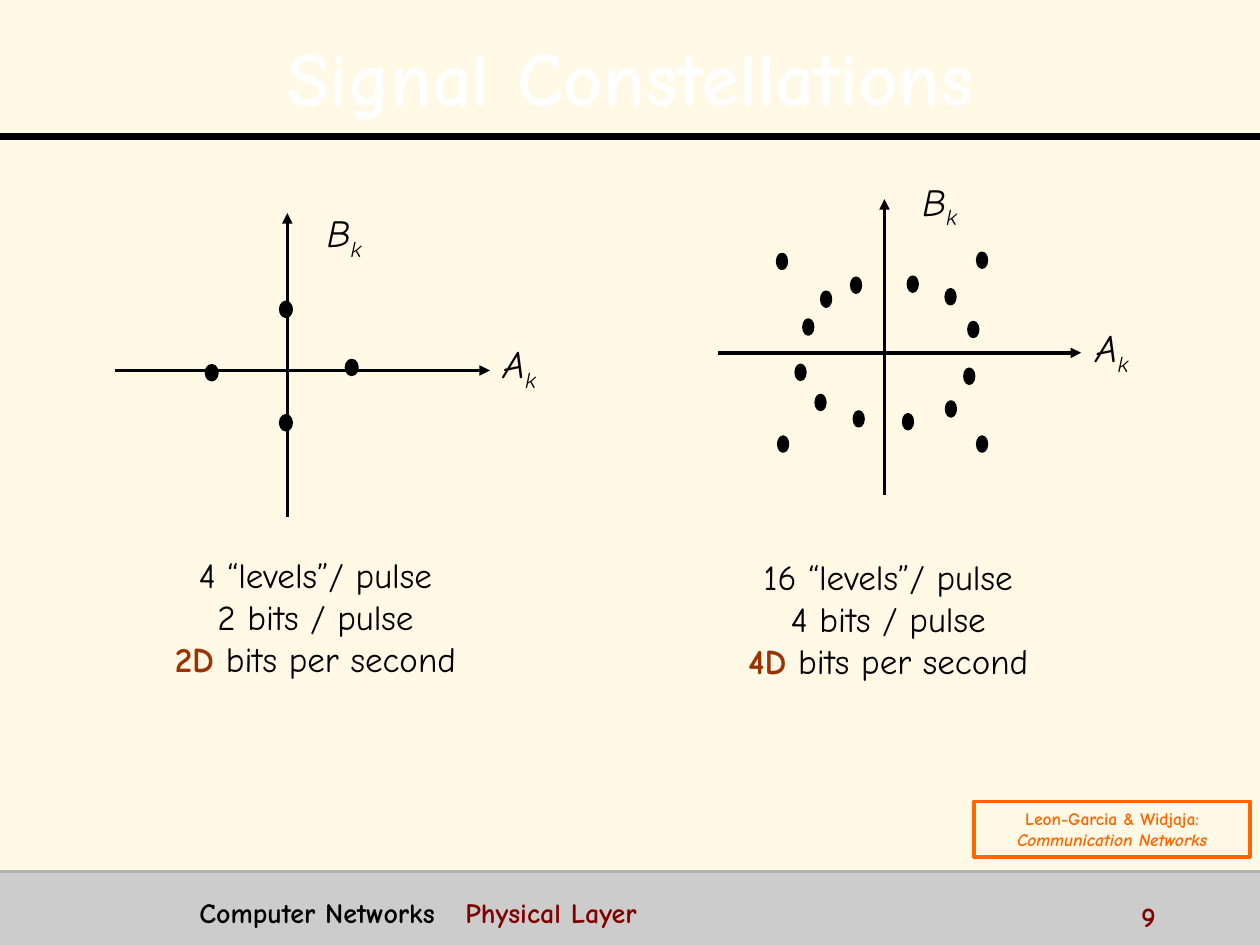
from lxml.etree import SubElement
from pptx import Presentation
from pptx.dml.color import RGBColor
from pptx.enum.shapes import MSO_CONNECTOR as Conn, MSO_SHAPE as Shape
from pptx.enum.text import MSO_ANCHOR as Anchor, MSO_AUTO_SIZE as Auto, PP_ALIGN as Align
from pptx.oxml.ns import qn
from pptx.util import Pt

FONT = "Comic Neue"
BLACK, RED, RUST, FLAME = "000000", "800000", "993300", "FF6600"


def paint(color, hue):
    """Set a solid fill or a font colour from a hex string."""
    if hasattr(color, "solid"):
        color.solid()
        color = color.fore_color
    color.rgb = RGBColor.from_string(hue)


def line(shapes, start, end, hue=BLACK, width=2, arrow=False):
    """Draw a straight line, with an arrowhead at its end if asked."""
    item = shapes.add_connector(Conn.STRAIGHT, *map(Pt, start + end))
    paint(item.line.fill, hue)
    item.line.width = Pt(width)
    if arrow:
        SubElement(item.line._get_or_add_ln(), qn("a:tailEnd"), type="triangle")
    SubElement(item._element.spPr, qn("a:effectLst"))


def shape(shapes, kind, area, fill=None, edge=None):
    """Add a flat preset shape with an optional fill and edge."""
    item = shapes.add_shape(kind, *map(Pt, area))
    item.shadow.inherit = False
    if fill:
        paint(item.fill, fill)
    else:
        item.fill.background()
    if edge:
        paint(item.line.fill, edge)
        item.line.width = Pt(2)
    else:
        item.line.fill.background()
    return item


def write(para, parts, size, align=Align.LEFT):
    """Fill a paragraph with runs given as (text, colour, styles)."""
    para.alignment = align
    for text, hue, style in parts:
        run = para.add_run()
        run.text = text
        font = run.font
        font.name, font.size = FONT, Pt(size)
        font.bold, font.italic = "b" in style, "i" in style
        paint(font.color, hue)
        if "s" in style:
            font._element.set("baseline", "-25000")


def fill_text(frame, rows, size, align=Align.LEFT):
    """Write one paragraph for each row of runs."""
    for i, parts in enumerate(rows):
        para = frame.add_paragraph() if i else frame.paragraphs[0]
        write(para, parts, size, align)


def text(shapes, area, rows, size, align=Align.LEFT, wrap=True, pad=(7.2, 3.6)):
    """Add a text box with equal opposite insets."""
    frame = shapes.add_textbox(*map(Pt, area)).text_frame
    frame.word_wrap = wrap
    frame.auto_size = Auto.NONE if wrap else Auto.SHAPE_TO_FIT_TEXT
    frame.margin_left = frame.margin_right = Pt(pad[0])
    frame.margin_top = frame.margin_bottom = Pt(pad[1])
    fill_text(frame, rows, size, align)
    return frame


def title(shapes, words):
    """Add the centred heading with its text shadow."""
    frame = text(shapes, (14.4, 9.4, 692, 62.6), [[(words, "FFFFFF", "b")]], 44, Align.CENTER)
    frame.vertical_anchor = Anchor.MIDDLE
    para = frame.paragraphs[0]
    para.line_spacing = 1.1
    props = para.runs[0].font._element
    glow = props.makeelement(qn("a:effectLst"), {})
    props.find(qn("a:solidFill")).addnext(glow)
    drop = SubElement(glow, qn("a:outerShdw"), dist="35921", dir="2700000")
    SubElement(drop, qn("a:srgbClr"), val=BLACK)


def plot(slide, upright, level, labels, width, dots):
    """Draw two axes with labels and signal points as one group."""
    shapes = slide.shapes.add_group_shape().shapes
    for start, end in (upright, level):
        line(shapes, start, end, arrow=True)
    for spot in dots:
        shape(shapes, Shape.OVAL, spot + (width, 8), BLACK, BLACK)
    for name, spot in zip("AB", labels):
        row = [(name, BLACK, "i"), ("k", BLACK, "is")]
        text(shapes, spot + (42, 37.4), [row], 22, Align.CENTER, False, (10.8, 5.8))
    return shapes


def caption(shapes, area, levels, bits):
    """State the levels, bits and bit rate of a constellation."""
    rows = [
        [(f"{levels} “levels”/ pulse", BLACK, "")],
        [(f"{bits} bits / pulse", BLACK, "")],
        [(f"{bits}D", RUST, "b"), (" bits per second", BLACK, "")],
    ]
    text(shapes, area, rows, 20, Align.CENTER, False)


def footer(shapes):
    """Write the course, the chapter and the page number."""
    frame = text(shapes, (101.5, 508.3, 524, 22.3), [], 16)
    frame.margin_left = Pt(12.5)
    para = frame.paragraphs[0]
    tabs = SubElement(para._p.get_or_add_pPr(), qn("a:tabLst"))
    SubElement(tabs, qn("a:tab"), pos=str(Pt(152)), algn="l")
    write(para, [("Computer Networks\t", BLACK, "b"), ("Physical Layer", RED, "b")], 16)
    text(shapes, (645, 510.5, 72, 18), [[("9", RED, "b")]], 16)


def credit(shapes):
    """Name the source book in an outlined box."""
    frame = shape(shapes, Shape.RECTANGLE, (556.6, 458, 157.7, 31.7), edge=FLAME).text_frame
    frame.word_wrap = True
    frame.vertical_anchor = Anchor.MIDDLE
    rows = [[("Leon-Garcia & Widjaja:", FLAME, "b")], [("Communication Networks", FLAME, "bi")]]
    fill_text(frame, rows, 10, Align.CENTER)


def main():
    """Build and save the slide."""
    deck = Presentation()
    deck.slide_width, deck.slide_height = Pt(720), Pt(540)
    slide = deck.slides.add_slide(deck.slide_layouts[6])
    shapes = slide.shapes
    paint(slide.background.fill, "FFF9E6")
    shape(shapes, Shape.RECTANGLE, (0, 498, 720, 42), "CCCCCC")
    line(shapes, (0, 78), (720, 78), width=4)
    line(shapes, (0, 498), (720, 498), "B2B2B2")
    title(shapes, "Signal Constellations")
    footer(shapes)

    four = [(160.4, 172.8), (198, 206), (118, 209), (160.4, 237.6)]
    plot(slide, ((164.2, 295.2), (164.2, 121.7)), ((65.5, 211.7), (280, 211.7)),
         [(275.8, 188.6), (175.7, 113.8)], 6, four)
    caption(shapes, (84.2, 312.5, 192.2, 80), 4, 2)

    sixteen = [
        (444.4, 145.4), (486.7, 159), (459.4, 182.9), (469.6, 167),
        (519.1, 158.4), (558.7, 144.7), (540.7, 165.6), (553.7, 184.3),
        (455, 208.8), (466.4, 226), (445, 249.8), (488.2, 235.4),
        (540.9, 229.7), (551.4, 211), (516.4, 237), (558.7, 249.8),
    ]
    group = plot(slide, ((505.4, 283), (505.4, 113.8)), ((410.4, 201.6), (617.8, 201.6)),
                 [(614.4, 179.3), (516, 95.8)], 5, sixteen)
    caption(group, (407.5, 314, 173.6 + 26.6, 80), 16, 4)
    credit(shapes)
    deck.save("out.pptx")


if __name__ == "__main__":
    main()
